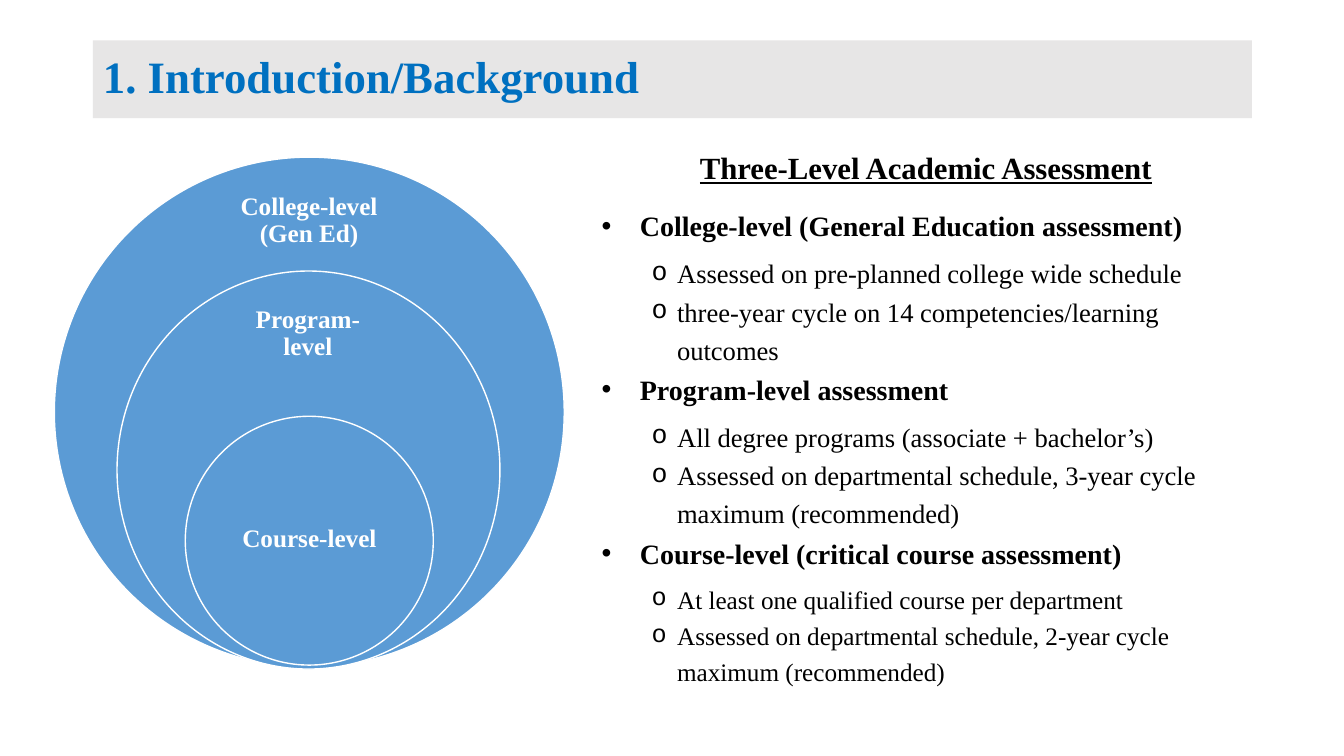
from lxml import etree
from pptx import Presentation
from pptx.dml.color import RGBColor
from pptx.enum.shapes import MSO_SHAPE
from pptx.enum.text import MSO_ANCHOR, MSO_AUTO_SIZE, PP_ALIGN
from pptx.oxml.ns import qn
from pptx.util import Cm, Pt

OVAL = MSO_SHAPE.OVAL
MIDDLE, TOP = MSO_ANCHOR.MIDDLE, MSO_ANCHOR.TOP
LEFT, CENTER = PP_ALIGN.LEFT, PP_ALIGN.CENTER
NO_FIT = MSO_AUTO_SIZE.NONE


def rgb(value):
    return RGBColor.from_string(value)


def style(p, size, color, bold=True, align=LEFT, spacing=0.9):
    p.alignment = align
    p.line_spacing = spacing
    p.space_before = Pt(0)
    p.font.name = "Times New Roman"
    p.font.size = Pt(size)
    p.font.bold = bold
    p.font.color.rgb = rgb(color)


prs = Presentation()
prs.slide_width, prs.slide_height = Cm(33.87), Cm(19.05)
s = prs.slides.add_slide(prs.slide_layouts[1])

title = s.shapes.title
title.left, title.top, title.width, title.height = Cm(2.34), Cm(1.02), Cm(29.21), Cm(1.96)
title.fill.solid()
title.fill.fore_color.rgb = rgb("E7E6E6")
tf = title.text_frame
tf.text = "1. Introduction/Background"
tf.auto_size = NO_FIT
tf.vertical_anchor = MIDDLE
style(tf.paragraphs[0], 32, "0070C0")

body = s.placeholders[1]
body.left, body.top, body.width, body.height = Cm(14.91), Cm(3.43), Cm(16.84), Cm(14.12)
tf = body.text_frame
tf.auto_size = NO_FIT
tf.vertical_anchor = TOP
p = tf.paragraphs[0]
p.text = "Three-Level Academic Assessment"
style(p, 22, "000000", align=CENTER, spacing=1.2)
p.space_after = Pt(12)
p.font.underline = True
pPr = p._p.get_or_add_pPr()
pPr.set("marL", "0")
pPr.set("indent", "0")
pPr.insert_element_before(etree.Element(qn("a:buNone")), "a:defRPr")

sections = [
    ("College-level (General Education assessment)", 19, [
        "Assessed on pre-planned college wide schedule",
        "three-year cycle on 14 competencies/learning outcomes"]),
    ("Program-level assessment", 19, [
        "All degree programs (associate + bachelor’s)",
        "Assessed on departmental schedule, 3-year cycle maximum (recommended)"]),
    ("Course-level (critical course assessment)", 18, [
        "At least one qualified course per department",
        "Assessed on departmental schedule, 2-year cycle maximum (recommended)"]),
]
LEVELS = [("•", "Arial", Cm(0.96), Cm(-0.96), 6), ("o", "Courier New", Cm(1.9), Cm(-0.64), 0)]
for heading, detail_size, details in sections:
    lines = [(heading, 0, 20)] + [(detail, 1, detail_size) for detail in details]
    for text, level, size in lines:
        char, bullet_font, margin, indent, after = LEVELS[level]
        p = tf.add_paragraph()
        p.text = text
        p.level = level
        style(p, size, "000000", bold=level == 0, spacing=1.2)
        p.space_after = Pt(after)
        pPr = p._p.get_or_add_pPr()
        pPr.set("marL", str(margin))
        pPr.set("indent", str(indent))
        for tag, key, value in (("a:buFont", "typeface", bullet_font), ("a:buChar", "char", char)):
            bullet = etree.Element(qn(tag))
            bullet.set(key, value)
            pPr.insert_element_before(bullet, "a:defRPr")

circles = [
    ("College-level (Gen Ed)", (1.37, 3.96, 12.85, 12.85), (5.54, 4.6, 4.5, 1.93)),
    ("Program-level", (2.95, 6.83, 9.65, 10.03), (5.51, 7.47, 4.5, 1.88)),
    ("Course-level", (4.67, 10.49, 6.25, 6.27), (5.59, 12.04, 4.42, 3.12)),
]
group = s.shapes.add_group_shape()
for label, oval_box, label_box in circles:
    sp = group.shapes.add_shape(OVAL, *[Cm(v) for v in oval_box])
    sp.shadow.inherit = False
    sp.fill.solid()
    sp.fill.fore_color.rgb = rgb("5B9BD5")
    sp.line.color.rgb = rgb("FFFFFF")
    sp.line.width = Pt(1)
    tf = group.shapes.add_textbox(*[Cm(v) for v in label_box]).text_frame
    tf.word_wrap = True
    tf.vertical_anchor = MIDDLE
    tf.margin_left = tf.margin_right = tf.margin_top = tf.margin_bottom = Cm(0.36)
    tf.text = label
    style(tf.paragraphs[0], 18, "FFFFFF", align=CENTER)

prs.save("out.pptx")
